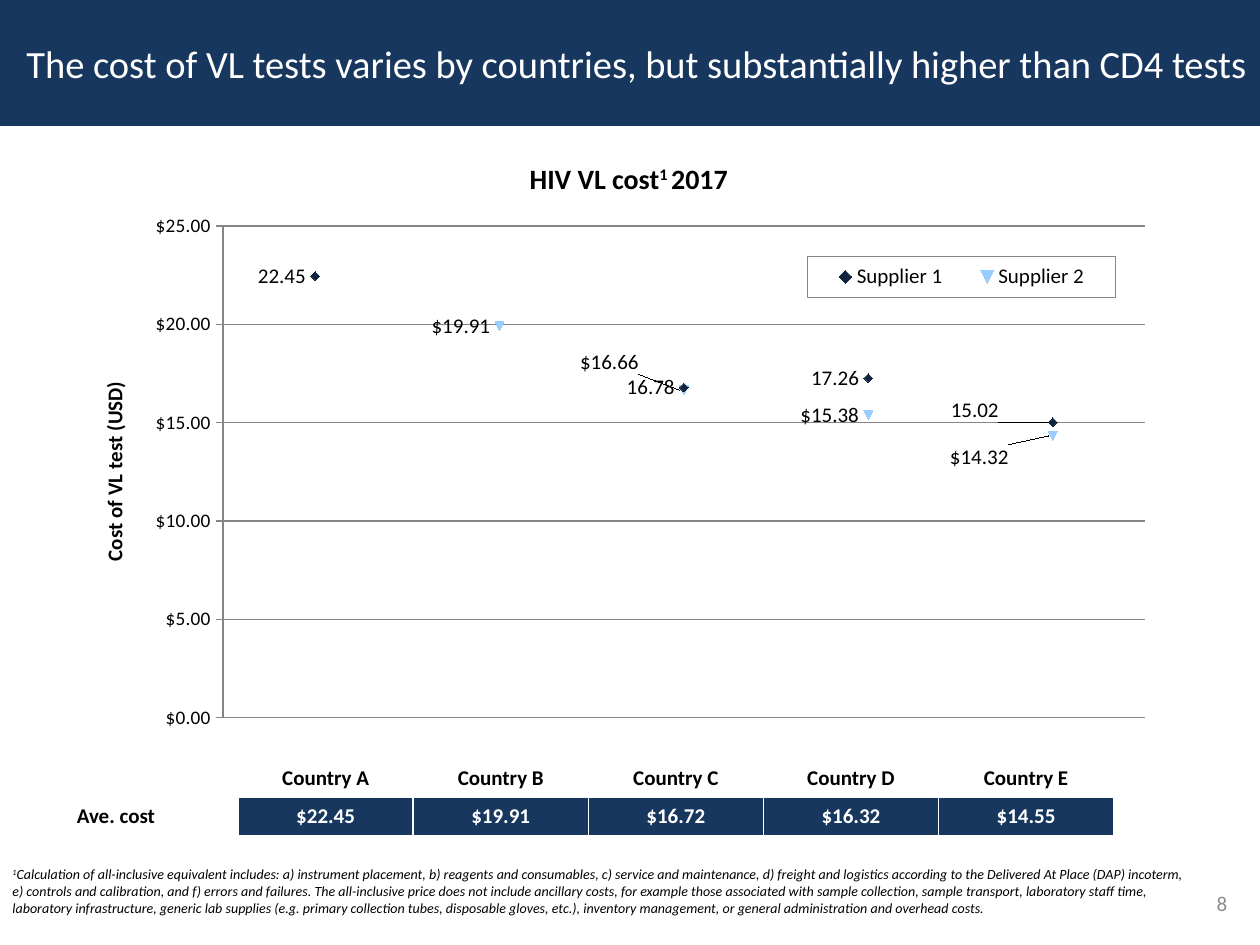
"""Build a slide that charts viral load test costs by country."""
from dataclasses import dataclass

from lxml import etree
from pptx import Presentation
from pptx.chart.data import XyChartData
from pptx.chart.datalabel import DataLabels
from pptx.dml.color import RGBColor
from pptx.enum.chart import (XL_CHART_TYPE, XL_LABEL_POSITION, XL_LEGEND_POSITION,
                             XL_MARKER_STYLE, XL_TICK_LABEL_POSITION, XL_TICK_MARK)
from pptx.enum.shapes import MSO_SHAPE
from pptx.enum.text import MSO_ANCHOR, PP_ALIGN
from pptx.oxml import parse_xml
from pptx.oxml.ns import nsdecls, qn
from pptx.util import Inches, Pt

SCATTER = XL_CHART_TYPE.XY_SCATTER
LEFT = XL_LABEL_POSITION.LEFT
RIGHT = XL_LEGEND_POSITION.RIGHT
DIAMOND, AUTO = XL_MARKER_STYLE.DIAMOND, XL_MARKER_STYLE.AUTOMATIC
NEXT = XL_TICK_LABEL_POSITION.NEXT_TO_AXIS
OUTSIDE, NONE = XL_TICK_MARK.OUTSIDE, XL_TICK_MARK.NONE
RECT = MSO_SHAPE.RECTANGLE
START, CENTER, END = PP_ALIGN.LEFT, PP_ALIGN.CENTER, PP_ALIGN.RIGHT
TOP, MIDDLE = MSO_ANCHOR.TOP, MSO_ANCHOR.MIDDLE


@dataclass(frozen=True)
class Theme:
    face: str = "Calibri"
    navy: RGBColor = RGBColor(0x17, 0x37, 0x5E)
    dark: RGBColor = RGBColor(0x0F, 0x24, 0x3E)
    sky: RGBColor = RGBColor(0x99, 0xCC, 0xFF)
    gray: RGBColor = RGBColor(0x86, 0x86, 0x86)
    pale: RGBColor = RGBColor(0x8C, 0x8C, 0x8C)
    white: RGBColor = RGBColor(0xFF, 0xFF, 0xFF)
    black: RGBColor = RGBColor(0, 0, 0)
    title: Pt = Pt(22)
    head: Pt = Pt(16)
    body: Pt = Pt(12)
    tick: Pt = Pt(11)
    note: Pt = Pt(8)


def style(font, size, color, bold=False, italic=False):
    font.name, font.size = theme.face, size
    font.bold, font.italic = bold, italic
    font.color.rgb = color


def layout(x, y, **more):
    parts = {"x": x, "y": y, **more}
    modes = '<c:xMode val="edge"/><c:yMode val="edge"/>' if more else ""
    sizes = "".join(f'<c:{key} val="{val}"/>' for key, val in parts.items())
    inner = '<c:layoutTarget val="inner"/>' if more.get("h", 0) > 0.5 else ""
    return parse_xml(f'<c:layout {nsdecls("c")}><c:manualLayout>{inner}{modes}{sizes}'
                     '</c:manualLayout></c:layout>')


theme = Theme()
deck = Presentation()
deck.slide_width, deck.slide_height = Inches(10), Inches(7.5)
slide = deck.slides.add_slide(deck.slide_layouts[6])
shapes = slide.shapes

band = shapes.add_shape(RECT, 0, 0, Inches(10), Inches(1))
band.shadow.inherit = False
band.fill.solid()
band.fill.fore_color.rgb = theme.navy
band.line.fill.background()
frame = band.text_frame
frame.margin_left, frame.margin_right = Inches(0.21), Inches(0.05)
frame.vertical_anchor = MIDDLE
para = frame.paragraphs[0]
para.text = "The cost of VL tests varies by countries, but substantially higher than CD4 tests"
para.alignment = START
style(para.font, theme.title, theme.white)

note = ("Calculation of all-inclusive equivalent includes: a) instrument placement, "
        "b) reagents and consumables, c) service and maintenance, d) freight and logistics "
        "according to the Delivered At Place (DAP) incoterm, e) controls and calibration, "
        "and f) errors and failures. The all-inclusive price does not include ancillary costs, "
        "for example those associated with sample collection, sample transport, laboratory "
        "staff time, laboratory infrastructure, generic lab supplies (e.g. primary collection "
        "tubes, disposable gloves, etc.), inventory management, or general administration "
        "and overhead costs.")
texts = [
    ((8.91, 6.97, 0.93, 0.4), ["8"], END, MIDDLE, (theme.body, theme.pale)),
    ((0.15, 1.23, 9.68, 0.37), ["HIV VL cost", "1 ", "2017"], CENTER, TOP,
     (theme.head, theme.black, True)),
    ((0, 6.82, 9.61, 0.64), ["1", note], START, TOP, (theme.note, theme.black, False, True)),
]
for place, runs, align, anchor, look in texts:
    frame = shapes.add_textbox(*map(Inches, place)).text_frame
    frame.word_wrap = True
    frame.vertical_anchor = anchor
    para = frame.paragraphs[0]
    para.alignment = align
    style(para.font, *look)
    for words in runs:
        run = para.add_run()
        run.text = words
        if words.strip() == "1":
            run._r.get_or_add_rPr().set("baseline", "30000")

rows = [["", *(f"Country {letter}" for letter in "ABCDE")],
        ["Ave. cost", "$22.45", "$19.91", "$16.72", "$16.32", "$14.55"]]
table = shapes.add_table(2, 6, Inches(0.51), Inches(6.03), Inches(8.35), Inches(0.6)).table
table.first_row = table.horz_banding = False
for col, column in enumerate(table.columns):
    column.width = Inches(1.39 if col else 1.38)
for row, words in enumerate(rows):
    table.rows[row].height = Inches(0.3)
    for col, word in enumerate(words):
        cell = table.cell(row, col)
        cell.margin_top = cell.margin_bottom = 0
        cell.vertical_anchor = MIDDLE
        para = cell.text_frame.paragraphs[0]
        para.text = word
        para.alignment = CENTER if col else START
        filled = row and col
        style(para.font, theme.body, theme.white if filled else theme.black, True)
        props = cell._tc.get_or_add_tcPr()
        for side in "LRTB":
            line = etree.SubElement(props, qn(f"a:ln{side}"), w=str(Pt(1)))
            paint = etree.SubElement(line, qn("a:solidFill"))
            etree.SubElement(paint, qn("a:srgbClr"), val=str(theme.white))
        if filled:
            cell.fill.solid()
            cell.fill.fore_color.rgb = theme.navy
        else:
            cell.fill.background()

money = '"$"#,##0.00'
costs = [("Supplier 1", "General", [22.45, None, 16.78, 17.26, 15.02]),
         ("Supplier 2", money, [None, 19.91, 16.66, 15.38, 14.32])]
data = XyChartData()
for name, form, prices in costs:
    group = data.add_series(name, number_format=form)
    for x, price in enumerate(prices, 1):
        group.add_data_point(x, price)
chart = shapes.add_chart(SCATTER, Inches(0.67), Inches(1.7), Inches(8.66), Inches(4.09),
                         data).chart
style(chart.font, theme.body, theme.black)
chart.has_title = False
area = chart._chartSpace.chart.plotArea
for old in area.findall(qn("c:layout")):
    area.remove(old)
area.insert(0, layout(0.127, 0.021, w=0.845, h=0.959))
for point in area.xpath('.//c:pt[c:v="None"]'):
    point.getparent().remove(point)

across, up = chart.category_axis, chart.value_axis
across.minimum_scale, across.maximum_scale = 0.5, 5.5
across.has_major_gridlines = False
across.visible = False
up.minimum_scale, up.maximum_scale, up.major_unit = 0, 25, 5
up.has_major_gridlines = True
up.major_gridlines.format.line.color.rgb = theme.gray
up.format.line.color.rgb = theme.gray
up.major_tick_mark, up.minor_tick_mark = OUTSIDE, NONE
up.tick_label_position = NEXT
up.tick_labels.number_format = money
up.tick_labels.number_format_is_linked = False
style(up.tick_labels.font, theme.tick, theme.black)
para = up.axis_title.text_frame.paragraphs[0]
para.text = "Cost of VL test (USD)"
style(para.font, theme.body, theme.black, True)

chart.has_legend = True
legend = chart.legend
legend.position = RIGHT
legend.include_in_layout = False
style(legend.font, theme.body, theme.black)
key = legend._element
for old in key.findall(qn("c:layout")):
    key.remove(old)
key.find(qn("c:legendPos")).addnext(layout(0.663, 0.08, w=0.282, h=0.08))
key.find(qn("c:overlay")).addnext(parse_xml(
    f'<c:spPr {nsdecls("c", "a")}><a:ln w="9525"><a:solidFill>'
    f'<a:srgbClr val="{theme.gray}"/></a:solidFill></a:ln></c:spPr>'))

chart.plots[0].vary_by_categories = False
looks = [(theme.dark, DIAMOND, {4: (-0.041, -0.023)}),
         (theme.sky, AUTO, {2: (-0.033, -0.055), 4: (-0.032, 0.041)})]
for group, (_, form, _), (color, mark, moves) in zip(chart.plots[0].series, costs, looks):
    group.format.line.fill.background()
    group.marker.style, group.marker.size = mark, 5
    group.marker.format.fill.solid()
    group.marker.format.fill.fore_color.rgb = color
    group.marker.format.line.color.rgb = color
    tags = group._element.get_or_add_dLbls()
    labels = DataLabels(tags)
    labels.show_value = True
    labels.position = LEFT
    labels.number_format, labels.number_format_is_linked = form, False
    style(labels.font, theme.body, theme.black)
    for spot, move in moves.items():
        label = group.points[spot].data_label
        style(label.font, theme.body, theme.black)
        label.position = LEFT
        tags.findall(qn("c:dLbl"))[-1].find(qn("c:idx")).addnext(layout(*move))

deck.save("out.pptx")
